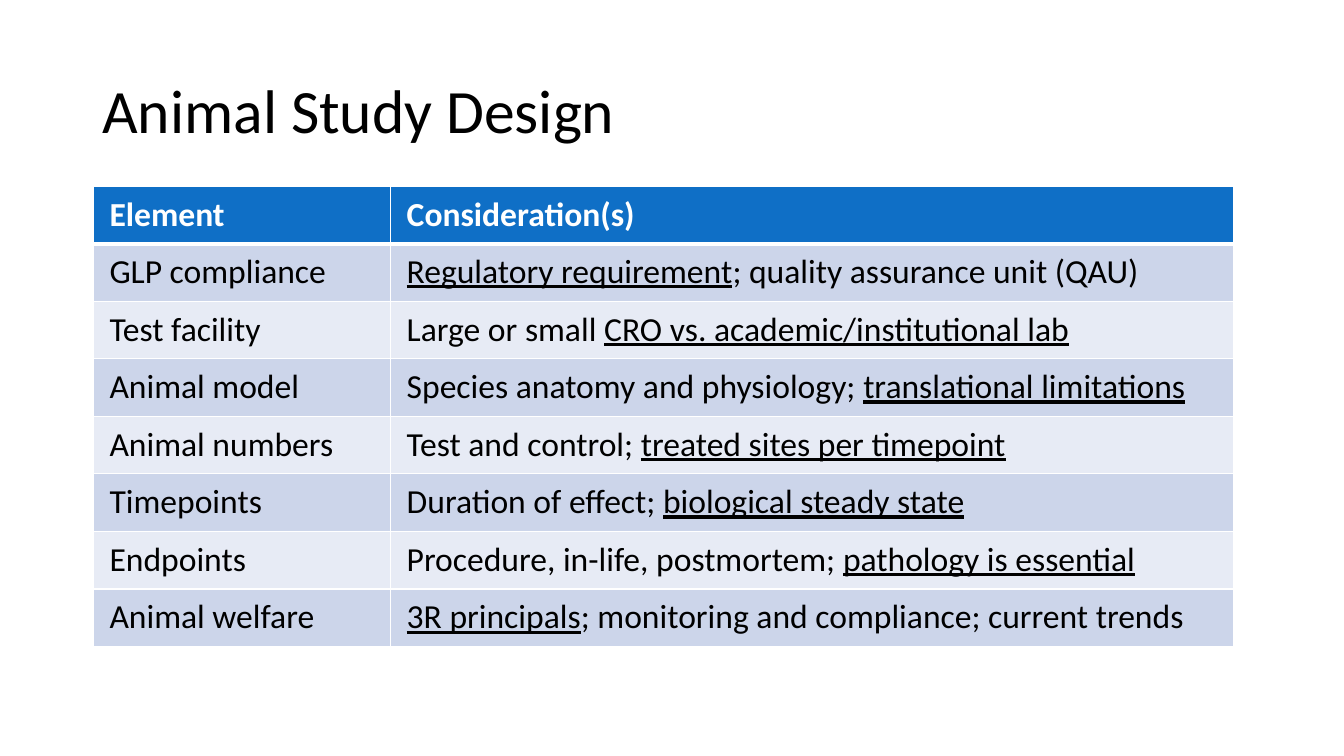
from lxml.etree import SubElement
from pptx import Presentation
from pptx.dml.color import RGBColor
from pptx.enum.text import MSO_ANCHOR
from pptx.oxml.ns import qn
from pptx.util import Cm, Pt

FONT = "Calibri"
BLACK, WHITE = "000000", "FFFFFF"
HEADER_FILL = "0F6FC6"
BAND_FILLS = ("CCD5EA", "E7EBF5")
COLUMN_WIDTHS = (7.49, 21.26)
HEADER_HEIGHT, ROW_HEIGHT = 1.44, 1.45

HEADINGS = ("Element", "Consideration(s)")
# Each consideration is a list of (text, underlined) runs.
ELEMENTS = [
    ("GLP compliance", [("Regulatory requirement", True),
                        ("; quality assurance unit (QAU)", False)]),
    ("Test facility", [("Large or small ", False),
                       ("CRO vs. academic/institutional lab", True)]),
    ("Animal model", [("Species anatomy and physiology; ", False),
                      ("translational limitations", True)]),
    ("Animal numbers", [("Test and control; ", False),
                        ("treated sites per timepoint", True)]),
    ("Timepoints", [("Duration of effect; ", False),
                    ("biological steady state", True)]),
    ("Endpoints", [("Procedure, in-life, postmortem; ", False),
                   ("pathology is essential", True)]),
    ("Animal welfare", [("3R principals", True),
                        ("; monitoring and compliance; current trends", False)]),
]


def rgb(color):
    return RGBColor.from_string(color)


def add_run(paragraph, text, size, color, bold=False, underline=False):
    run = paragraph.add_run()
    run.text = text
    run.font.name = FONT
    run.font.size = Pt(size)
    run.font.color.rgb = rgb(color)
    run.font.bold = bold
    run.font.underline = underline


def add_title(slide, text):
    title = slide.shapes.add_textbox(Cm(2.33), Cm(1.01), Cm(29.21), Cm(3.68))
    frame = title.text_frame
    frame.word_wrap = True
    frame.vertical_anchor = MSO_ANCHOR.MIDDLE
    heading = frame.paragraphs[0]
    heading.line_spacing = 0.9
    add_run(heading, text, 44, BLACK)


def set_borders(cell, bottom_width):
    """Draw white borders; call before the fill, which must follow them."""
    properties = cell._tc.get_or_add_tcPr()
    for side, width in (("L", 1), ("R", 1), ("T", 1), ("B", bottom_width)):
        line = SubElement(properties, qn(f"a:ln{side}"), w=str(Pt(width)))
        fill = SubElement(line, qn("a:solidFill"))
        SubElement(fill, qn("a:srgbClr"), val=WHITE)


def fill_cell(cell, runs, fill, color=BLACK, bold=False, bottom_width=1):
    set_borders(cell, bottom_width)
    cell.fill.solid()
    cell.fill.fore_color.rgb = rgb(fill)
    cell.margin_left = cell.margin_right = Cm(0.41)
    cell.margin_top = cell.margin_bottom = Cm(0.2)
    for text, underline in runs:
        add_run(cell.text_frame.paragraphs[0], text, 24, color, bold, underline)


def add_design_table(slide):
    row_count = len(ELEMENTS) + 1
    height = HEADER_HEIGHT + ROW_HEIGHT * len(ELEMENTS)
    table = slide.shapes.add_table(
        row_count, len(HEADINGS), Cm(2.35), Cm(4.7),
        Cm(sum(COLUMN_WIDTHS)), Cm(height)).table
    for column, width in zip(table.columns, COLUMN_WIDTHS):
        column.width = Cm(width)
    for index, row in enumerate(table.rows):
        row.height = Cm(ROW_HEIGHT if index else HEADER_HEIGHT)

    for column, heading in enumerate(HEADINGS):
        fill_cell(table.cell(0, column), [(heading, False)], HEADER_FILL,
                  WHITE, bold=True, bottom_width=3)
    for index, (element, considerations) in enumerate(ELEMENTS):
        band = BAND_FILLS[index % 2]
        fill_cell(table.cell(index + 1, 0), [(element, False)], band,)
        fill_cell(table.cell(index + 1, 1), considerations, band)
    for column in range(len(HEADINGS)):
        top = table.cell(1, column)._tc.tcPr.find(qn("a:lnT"))
        top.set("w", str(Pt(3)))


def main():
    presentation = Presentation()
    presentation.slide_width = Cm(33.87)
    presentation.slide_height = Cm(19.05)
    slide = presentation.slides.add_slide(presentation.slide_layouts[6])
    add_title(slide, "Animal Study Design")
    add_design_table(slide)
    presentation.save("out.pptx")


if __name__ == "__main__":
    main()
